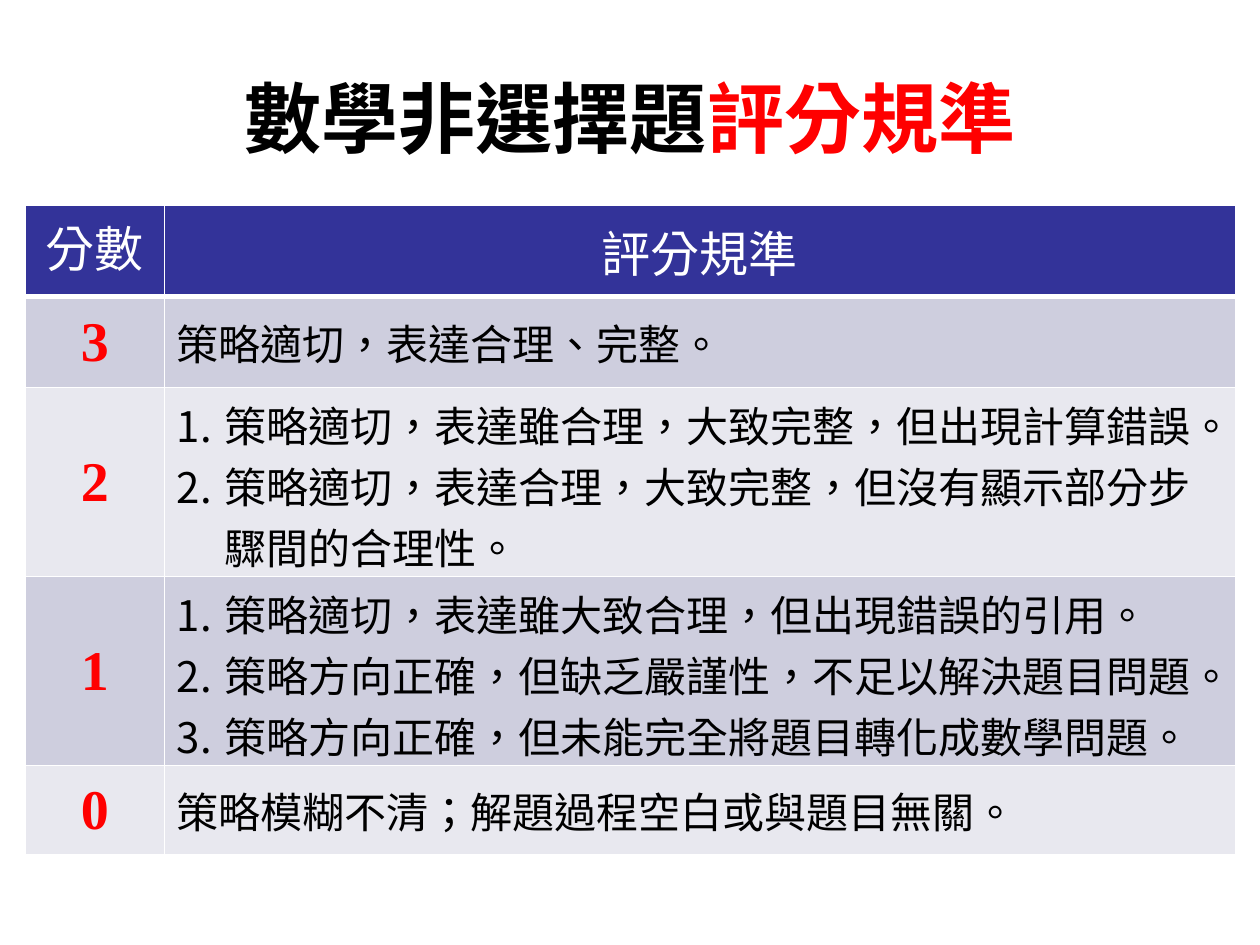
from dataclasses import dataclass

from lxml.etree import SubElement
from pptx import Presentation
from pptx.dml.color import RGBColor
from pptx.enum.lang import MSO_LANGUAGE_ID as Language
from pptx.enum.text import MSO_ANCHOR as Anchor, PP_ALIGN as Align
from pptx.oxml.ns import qn
from pptx.util import Pt


@dataclass(frozen=True)
class Theme:
    black: str = "000000"
    white: str = "FFFFFF"
    red: str = "FF0000"
    header_fill: str = "333399"
    band_fills: tuple[str, str] = ("CECEDE", "E8E8EF")
    chinese_font: str = "Noto Sans CJK SC"
    latin_font: str = "Times New Roman"
    title_size: float = 44
    header_size: float = 28
    score_size: float = 32
    body_size: float = 24


@dataclass(frozen=True)
class ScoreLevel:
    score: str
    criteria: tuple[str, ...]
    height: float


THEME = Theme()
HEADER_HEIGHT = 52.5
COLUMN_WIDTHS = (79.5, 612)
NUMBER_INDENT = 27
LEVELS = (
    ScoreLevel("3", ("策略適切，表達合理、完整。",), 52),
    ScoreLevel("2", (
        "策略適切，表達雖合理，大致完整，但出現計算錯誤。",
        "策略適切，表達合理，大致完整，但沒有顯示部分步驟間的合理性。",
    ), 108),
    ScoreLevel("1", (
        "策略適切，表達雖大致合理，但出現錯誤的引用。",
        "策略方向正確，但缺乏嚴謹性，不足以解決題目問題。",
        "策略方向正確，但未能完全將題目轉化成數學問題。",
    ), 108),
    ScoreLevel("0", ("策略模糊不清；解題過程空白或與題目無關。",), 51),
)


def add_text(paragraph, text: str, *, size: float, color: str, bold: bool = False,
             latin: str = THEME.latin_font, align: Align = Align.LEFT) -> None:
    paragraph.alignment = align
    run = paragraph.add_run()
    run.text = text
    font = run.font
    font.size = Pt(size)
    font.bold = bold
    font.color.rgb = RGBColor.from_string(color)
    font.name = latin
    font.language_id = Language.TRADITIONAL_CHINESE
    SubElement(run._r.get_or_add_rPr(), qn("a:ea"), typeface=THEME.chinese_font)


def number_paragraph(paragraph) -> None:
    properties = paragraph._p.get_or_add_pPr()
    properties.set("marL", str(Pt(NUMBER_INDENT)))
    properties.set("indent", str(-Pt(NUMBER_INDENT)))
    SubElement(properties, qn("a:buFont"), typeface=THEME.chinese_font)
    SubElement(properties, qn("a:buAutoNum"), type="arabicPeriod")


def style_cell(cell, fill: str, *, bottom: float = 1, anchor: Anchor = Anchor.MIDDLE) -> None:
    """Set the cell's white borders, fill, margins and vertical anchor."""
    properties = cell._tc.get_or_add_tcPr()
    for side, width in (("L", 1), ("R", 1), ("T", 1), ("B", bottom)):
        line = SubElement(properties, qn(f"a:ln{side}"), w=str(Pt(width)))
        SubElement(SubElement(line, qn("a:solidFill")), qn("a:srgbClr"), val=THEME.white)
    cell.fill.solid()
    cell.fill.fore_color.rgb = RGBColor.from_string(fill)
    cell.margin_left = cell.margin_right = Pt(7.2)
    cell.margin_top = cell.margin_bottom = Pt(3.6)
    cell.vertical_anchor = anchor


def add_title(slide) -> None:
    frame = slide.shapes.add_textbox(Pt(36), Pt(21.6), Pt(648), Pt(90)).text_frame
    frame.word_wrap = True
    frame.vertical_anchor = Anchor.MIDDLE
    for text, color in (("數學非選擇題", THEME.black), ("評分規準", THEME.red)):
        add_text(frame.paragraphs[0], text, size=THEME.title_size, color=color,
                 bold=True, latin=THEME.chinese_font, align=Align.CENTER)


def fill_header(table) -> None:
    table.rows[0].height = Pt(HEADER_HEIGHT)
    for column, (text, anchor) in enumerate((("分數", Anchor.TOP), ("評分規準", Anchor.MIDDLE))):
        cell = table.cell(0, column)
        style_cell(cell, THEME.header_fill, bottom=3, anchor=anchor)
        add_text(cell.text_frame.paragraphs[0], text, size=THEME.header_size,
                 color=THEME.white, align=Align.CENTER)


def fill_level(table, row: int, level: ScoreLevel) -> None:
    table.rows[row].height = Pt(level.height)
    score_cell, criteria_cell = table.cell(row, 0), table.cell(row, 1)
    for cell in (score_cell, criteria_cell):
        style_cell(cell, THEME.band_fills[(row - 1) % 2])
    add_text(score_cell.text_frame.paragraphs[0], level.score, size=THEME.score_size,
             color=THEME.red, bold=True, align=Align.CENTER)
    frame = criteria_cell.text_frame
    for index, text in enumerate(level.criteria):
        paragraph = frame.add_paragraph() if index else frame.paragraphs[0]
        if len(level.criteria) > 1:
            number_paragraph(paragraph)
        add_text(paragraph, text, size=THEME.body_size, color=THEME.black)


def add_score_table(slide) -> None:
    height = HEADER_HEIGHT + sum(level.height for level in LEVELS)
    table = slide.shapes.add_table(len(LEVELS) + 1, len(COLUMN_WIDTHS), Pt(14.4), Pt(117),
                                   Pt(sum(COLUMN_WIDTHS)), Pt(height)).table
    for column, width in zip(table.columns, COLUMN_WIDTHS):
        column.width = Pt(width)
    fill_header(table)
    for row, level in enumerate(LEVELS, start=1):
        fill_level(table, row, level)


def main() -> None:
    presentation = Presentation()
    presentation.slide_width, presentation.slide_height = Pt(720), Pt(540)
    slide = presentation.slides.add_slide(presentation.slide_layouts[6])
    add_title(slide)
    add_score_table(slide)
    presentation.save("out.pptx")


if __name__ == "__main__":
    main()
